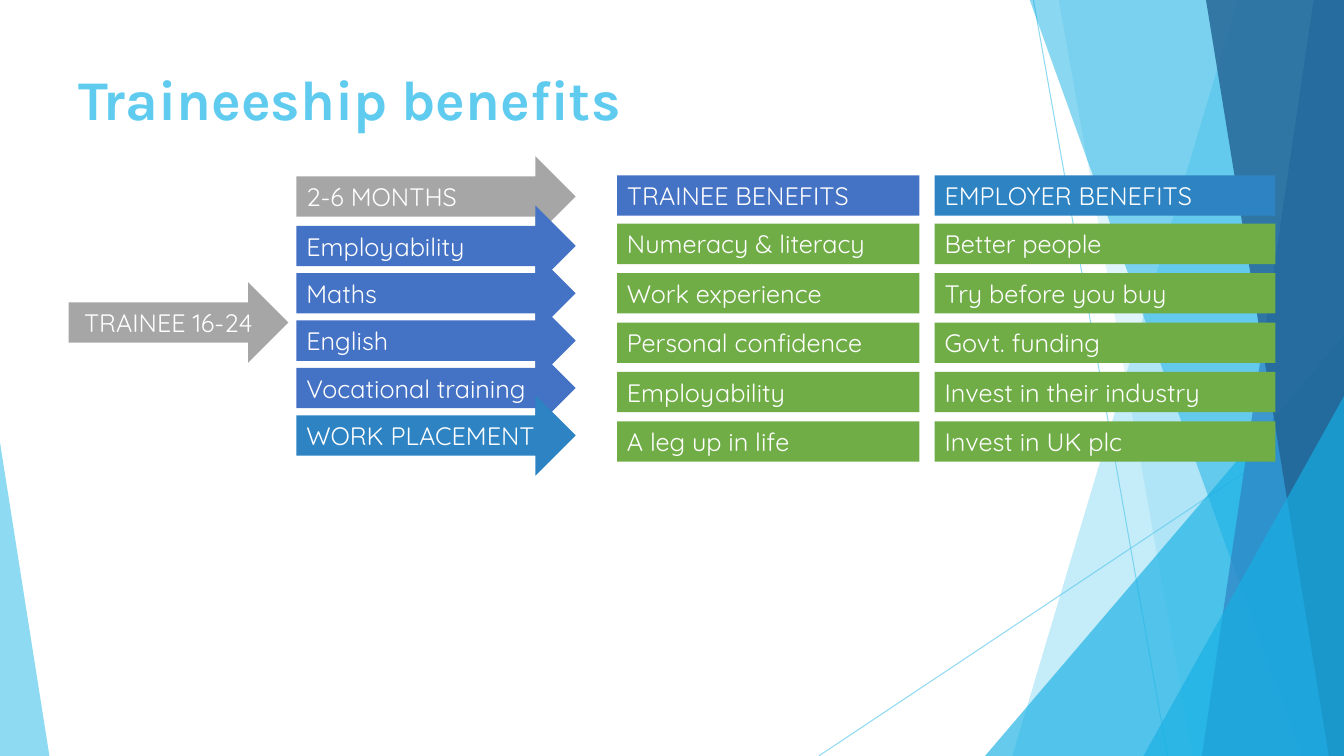
from pptx import Presentation
from pptx.dml.color import RGBColor
from pptx.enum.shapes import MSO_CONNECTOR, MSO_SHAPE
from pptx.enum.text import MSO_ANCHOR, PP_ALIGN
from pptx.oxml.ns import qn
from pptx.util import Pt
from lxml import etree

PX = 9144
ARROW, RECTANGLE = MSO_SHAPE.RIGHT_ARROW, MSO_SHAPE.RECTANGLE
TRIANGLE, STRAIGHT = MSO_SHAPE.ISOSCELES_TRIANGLE, MSO_CONNECTOR.STRAIGHT
TOP, MIDDLE = MSO_ANCHOR.TOP, MSO_ANCHOR.MIDDLE
LEFT, CENTER = PP_ALIGN.LEFT, PP_ALIGN.CENTER

COLORS = {
    "sky": "5FCBEF", "cyan": "17B0E4", "ocean": "2E83C3", "navy": "226292",
    "gray": "A6A6A6", "blue": "4472C4", "green": "70AD47", "white": "FFFFFF",
}

deck = Presentation()
deck.slide_width, deck.slide_height = 1333 * PX, 750 * PX
page = deck.slides.add_slide(deck.slide_layouts[6])


def paint(fill, color, opacity=100):
    fill.solid()
    fill.fore_color.rgb = RGBColor.from_string(COLORS[color])
    if opacity < 100:
        tint = fill._xPr.find(qn("a:solidFill"))[0]
        etree.SubElement(tint, qn("a:alpha"), val=str(opacity * 1000))


def add_label(preset, left, top, width, height, color, text, anchor, align=LEFT):
    box = page.shapes.add_shape(preset, left * PX, top * PX, width * PX, height * PX)
    box.shadow.inherit = False
    box.line.fill.background()
    paint(box.fill, color)
    frame = box.text_frame
    frame.word_wrap = True
    frame.vertical_anchor = anchor
    para = frame.paragraphs[0]
    para.alignment = align
    span = para.add_run()
    span.text = text
    span.font.name, span.font.size = "Quicksand", Pt(18)
    span.font.color.rgb = RGBColor.from_string(COLORS["white"])


for x1, y1, x2, y2 in [(1025, 0, 1158, 750), (1333, 403, 812, 750)]:
    ray = page.shapes.add_connector(STRAIGHT, x1 * PX, y1 * PX, x2 * PX, y2 * PX)
    ray.line.width = Pt(0.75)
    paint(ray.line.fill, "sky", 70)
    etree.SubElement(ray._element.spPr, qn("a:effectLst"))

facets = [
    ("band", 1228, 1004, "sky", 36),
    ("band", 1050, 1183, "sky", 20),
    ("triangle", 977, 333, 356, 417, 1, "cyan", 66),
    ("band", 1021, 1291, "cyan", 50),
    ("band", 1303, 1192, "ocean", 70),
    ("band", 1196, 1318, "navy", 80),
    ("triangle", 1134, 393, 199, 357, 1, "cyan", 66),
    ("triangle", 0, 439, 49, 311, 0, "sky", 70),
]
for kind, *place, color, opacity in facets:
    if kind == "band":
        top_left, bottom_left = place
        outline = page.shapes.build_freeform(top_left, -1, scale=PX)
        outline.add_line_segments([(1333, -1), (1333, 750), (bottom_left, 750)])
        facet = outline.convert_to_shape()
    else:
        *bounds, apex = place
        facet = page.shapes.add_shape(TRIANGLE, *[length * PX for length in bounds])
        facet.adjustments[0] = apex
    facet.shadow.inherit = False
    facet.line.fill.background()
    paint(facet.fill, color, opacity)

title = page.shapes.add_textbox(68 * PX, 59 * PX, 1241 * PX, 145 * PX)
title.text_frame.word_wrap = True
span = title.text_frame.paragraphs[0].add_run()
span.text = "Traineeship benefits"
span.font.name, span.font.size, span.font.bold = "Karla", Pt(40), True
span.font.color.rgb = RGBColor.from_string(COLORS["sky"])

add_label(ARROW, 68, 280, 218, 80, "gray", "TRAINEE 16-24", MIDDLE, CENTER)

add_label(ARROW, 294, 155, 277, 80, "gray", "2-6 MONTHS", MIDDLE)
steps = [
    ("Employability", "blue"),
    ("Maths", "blue"),
    ("English", "blue"),
    ("Vocational training", "blue"),
    ("WORK PLACEMENT", "ocean"),
]
for row, (step, color) in enumerate(steps):
    add_label(ARROW, 294, 204 + 47 * row, 277, 80, color, step, MIDDLE)

columns = [
    (612, 300, "blue", "TRAINEE BENEFITS",
     ["Numeracy & literacy", "Work experience", "Personal confidence",
      "Employability", "A leg up in life"]),
    (927, 338, "ocean", "EMPLOYER BENEFITS",
     ["Better people", "Try before you buy", "Govt. funding",
      "Invest in their industry", "Invest in UK plc"]),
]
for left, width, color, heading, benefits in columns:
    add_label(RECTANGLE, left, 174, width, 40, color, heading, TOP)
    for row, benefit in enumerate(benefits):
        add_label(RECTANGLE, left, 222 + 49 * row, width, 40, "green", benefit, TOP)

deck.save("out.pptx")
